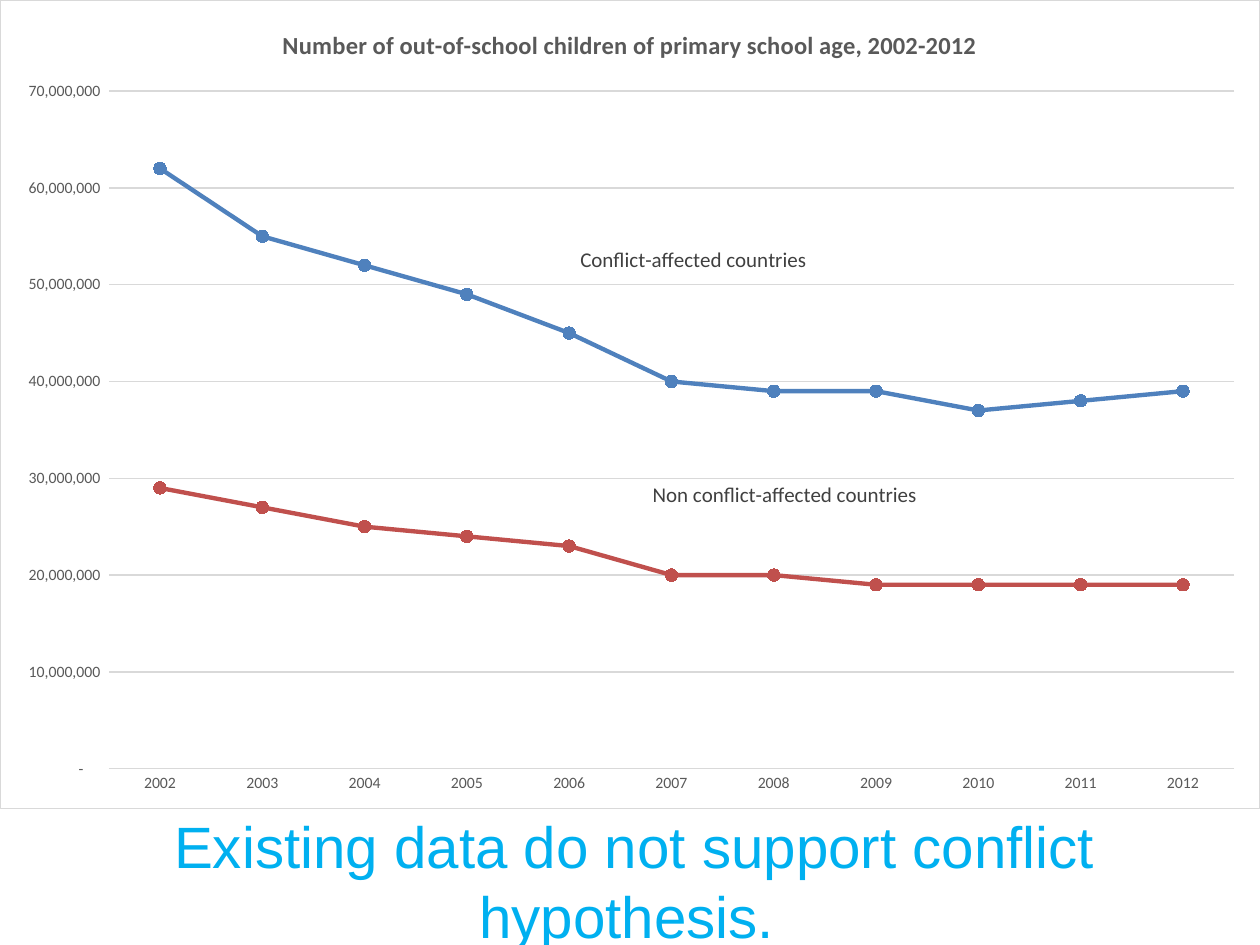
from lxml import etree
from pptx import Presentation
from pptx.chart.data import CategoryChartData as ChartData
from pptx.dml.color import RGBColor
from pptx.enum.chart import XL_CHART_TYPE as ChartType
from pptx.enum.chart import XL_LABEL_POSITION as LabelPosition
from pptx.enum.chart import XL_MARKER_STYLE as MarkerStyle
from pptx.enum.chart import XL_TICK_MARK as TickMark
from pptx.enum.text import MSO_ANCHOR as Anchor
from pptx.enum.text import MSO_AUTO_SIZE as AutoSize
from pptx.enum.text import PP_ALIGN as Align
from pptx.oxml import parse_xml
from pptx.oxml.ns import nsdecls, qn
from pptx.util import Cm, Pt

SKY = RGBColor(0x00, 0xB0, 0xF0)
BLUE = RGBColor(0x4F, 0x81, 0xBD)
RED = RGBColor(0xC0, 0x50, 0x4D)
GREY = RGBColor(0x59, 0x59, 0x59)
DARK = RGBColor(0x40, 0x40, 0x40)
PALE = RGBColor(0xD9, 0xD9, 0xD9)

MILLION = 1_000_000
YEARS = [str(year) for year in range(2002, 2013)]
CONFLICT = [62, 55, 52, 49, 45, 40, 39, 39, 37, 38, 39]
NON_CONFLICT = [29, 27, 25, 24, 23, 20, 20, 19, 19, 19, 19]
NUMBER_FORMAT = '_-* #,##0_-;\\-* #,##0_-;_-* "-"??_-;_-@_'
CHART_2012 = "http://schemas.microsoft.com/office/drawing/2012/chart"


class SlideBuilder:
    title_font = "Arial"
    chart_font = "Calibri"

    def __init__(self, page):
        self.page = page

    def set_font(self, font, name, size, color, bold=False):
        font.name = name
        font.size = Pt(size)
        font.bold = bold
        font.color.rgb = color

    def add_title(self, text, left, top, width, height):
        box = self.page.shapes.title
        box.left, box.top, box.width, box.height = left, top, width, height
        frame = box.text_frame
        frame.text = text
        frame.word_wrap = True
        frame.auto_size = AutoSize.NONE
        frame.vertical_anchor = Anchor.MIDDLE
        paragraph = frame.paragraphs[0]
        paragraph.alignment = Align.CENTER
        self.set_font(paragraph.font, self.title_font, 33.3, SKY)

    def add_line_chart(self, title, categories, lines, left, top, width, height):
        data = ChartData(number_format=NUMBER_FORMAT)
        data.categories = categories
        for name, values in lines:
            data.add_series(name, [value * MILLION for value in values])
        chart = self.page.shapes.add_chart(
            ChartType.LINE_MARKERS, left, top, width, height, data).chart
        chart.has_legend = False
        self.set_font(chart.font, self.chart_font, 10, GREY)
        chart.has_title = True
        frame = chart.chart_title.text_frame
        frame.text = title
        self.set_font(frame.paragraphs[0].font, self.chart_font, 14, GREY, True)
        self.style_axes(chart)
        self.place_plot(chart, 0.086, 0.112, 0.894, 0.839)
        self.add_border(chart)
        return chart

    def style_axes(self, chart):
        for axis in (chart.category_axis, chart.value_axis):
            axis.major_tick_mark = axis.minor_tick_mark = TickMark.NONE
            self.set_font(axis.tick_labels.font, self.chart_font, 9, GREY)
        values = chart.value_axis
        values.minimum_scale, values.maximum_scale = 0, 70 * MILLION
        values.major_unit = 10 * MILLION
        values.tick_labels.number_format = NUMBER_FORMAT
        values.tick_labels.number_format_is_linked = False
        values.format.line.fill.background()
        for line in (chart.category_axis.format.line, values.major_gridlines.format.line):
            line.color.rgb = PALE
            line.width = Pt(0.75)

    def make_layout(self, **settings):
        layout = parse_xml(f"<c:layout {nsdecls('c')}><c:manualLayout/></c:layout>")
        for tag, value in settings.items():
            etree.SubElement(layout[0], qn(f"c:{tag}")).set("val", str(value))
        return layout

    def place_plot(self, chart, x, y, w, h):
        plot_area = chart.plots[0]._element.getparent()
        for layout in plot_area.findall(qn("c:layout")):
            plot_area.remove(layout)
        plot_area.insert(0, self.make_layout(
            layoutTarget="inner", xMode="edge", yMode="edge", x=x, y=y, w=w, h=h))

    def add_border(self, chart):
        border = parse_xml(
            f'<c:spPr {nsdecls("c", "a")}><a:solidFill><a:srgbClr val="FFFFFF"/></a:solidFill>'
            f'<a:ln w="{Pt(0.75)}"><a:solidFill><a:srgbClr val="{PALE}"/></a:solidFill></a:ln>'
            "</c:spPr>")
        chart._chartSpace.find(qn("c:chart")).addnext(border)

    def style_series(self, series, color):
        series.smooth = False
        series.format.line.color.rgb = color
        series.format.line.width = Pt(2.5)
        marker = series.marker
        marker.style = MarkerStyle.CIRCLE
        marker.size = 7
        marker.format.fill.solid()
        marker.format.fill.fore_color.rgb = color
        marker.format.line.color.rgb = color

    def add_series_label(self, series, index, position, x, y):
        series.data_labels.show_value = False
        label = series.points[index].data_label
        self.set_font(label.font, self.chart_font, 12, DARK)
        label.position = position
        for element in series._element.iter(qn("c:dLbl")):
            element.find(qn("c:showVal")).set("val", "0")
            element.find(qn("c:showSerName")).set("val", "1")
            element.find(qn("c:idx")).addnext(self.make_layout(x=x, y=y))
        self.hide_leader_lines(series.data_labels._element)

    def hide_leader_lines(self, labels):
        for element in labels.findall(qn("c:showLeaderLines")):
            element.set("val", "0")
        labels.append(parse_xml(
            f'<c:extLst {nsdecls("c")}><c:ext uri="{{CE6537A1-D6FC-4f65-9D91-7224C49458BB}}" '
            f'xmlns:c15="{CHART_2012}"><c15:showLeaderLines val="0"/></c:ext></c:extLst>'))


def main():
    deck = Presentation()
    deck.slide_width, deck.slide_height = Cm(25.4), Cm(19.05)
    builder = SlideBuilder(deck.slides.add_slide(deck.slide_layouts[5]))
    builder.add_title("Existing data do not support conflict hypothesis. ",
                      Cm(0.2), Cm(16.74), Cm(25.2), Cm(2))
    chart = builder.add_line_chart(
        "Number of out-of-school children of primary school age, 2002-2012", YEARS,
        [("Conflict-affected countries", CONFLICT),
         ("Non conflict-affected countries", NON_CONFLICT)],
        Cm(0), Cm(0), Cm(25.4), Cm(16.31))
    conflict, non_conflict = chart.plots[0].series
    builder.style_series(conflict, BLUE)
    builder.style_series(non_conflict, RED)
    builder.add_series_label(conflict, 4, LabelPosition.RIGHT, 0, -0.09)
    builder.add_series_label(non_conflict, 5, LabelPosition.ABOVE, 0.09, -0.07)
    deck.save("out.pptx")


if __name__ == "__main__":
    main()
